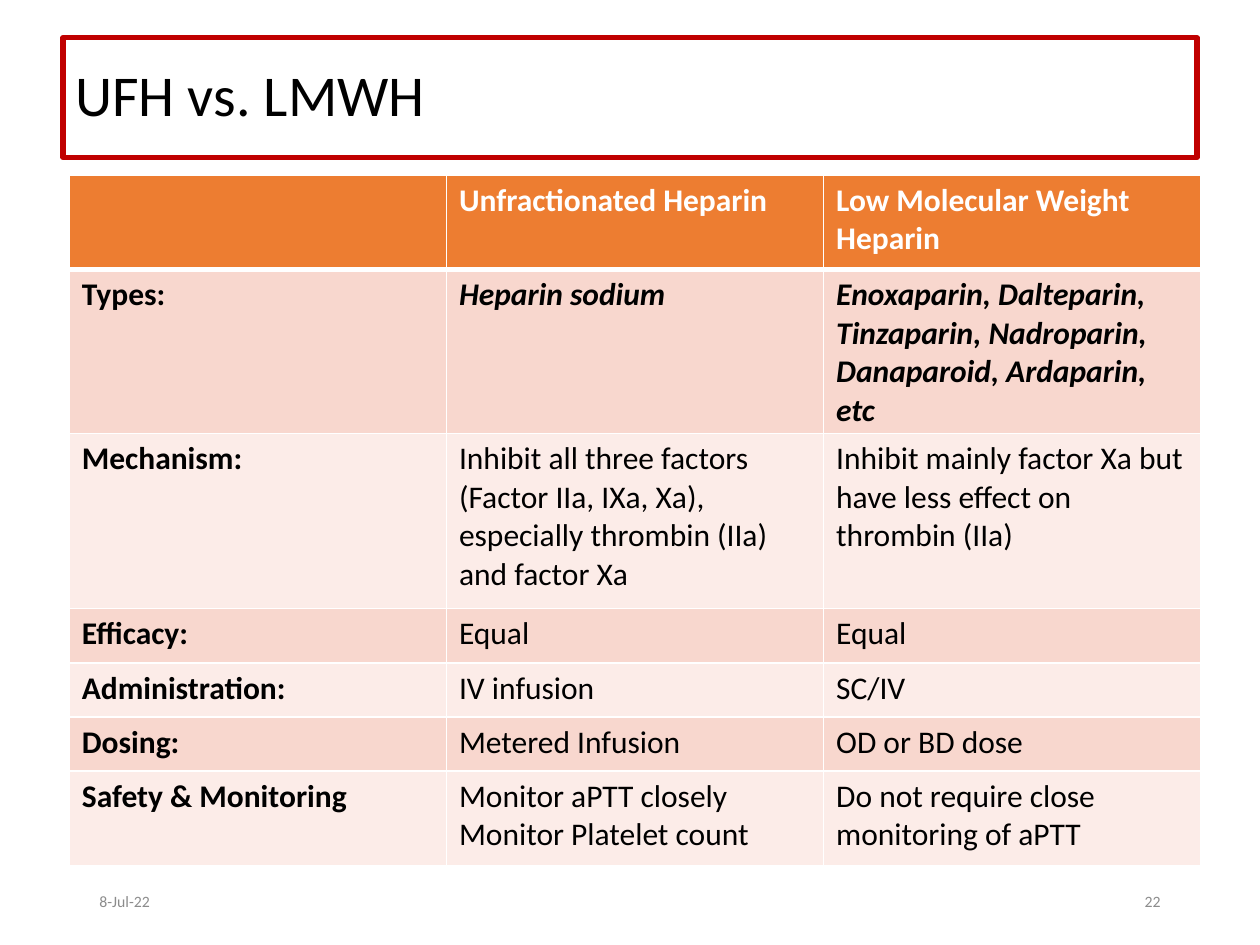
from lxml.etree import SubElement
from pptx import Presentation
from pptx.dml.color import RGBColor
from pptx.enum.shapes import MSO_SHAPE as Shape
from pptx.enum.text import MSO_ANCHOR as Anchor, PP_ALIGN as Align
from pptx.oxml.ns import qn
from pptx.util import Inches, Pt

TITLE = "UFH vs. LMWH"
FOOTERS = [("8-Jul-22", 0.69, Align.LEFT), ("22", 7.06, Align.RIGHT)]
ROWS = [
    (0.75, "", "Unfractionated Heparin", "Low Molecular Weight Heparin"),
    (1.07, "Types:", "Heparin sodium",
     "Enoxaparin, Dalteparin, Tinzaparin, Nadroparin, Danaparoid, Ardaparin, etc"),
    (1.39, "Mechanism:",
     "Inhibit all three factors (Factor IIa, IXa, Xa), especially thrombin (IIa) and factor Xa",
     "Inhibit mainly factor Xa but have less effect on thrombin (IIa)"),
    (0.43, "Efficacy:", "Equal", "Equal"),
    (0.43, "Administration:", "IV infusion", "SC/IV"),
    (0.43, "Dosing:", "Metered Infusion", "OD or BD dose"),
    (0.75, "Safety & Monitoring", "Monitor aPTT closely\nMonitor Platelet count",
     "Do not require close monitoring of aPTT"),
]
HEADER_FILL = "ED7D31"
BAND_FILLS = ["FCECE8", "F8D7CE"]
TABLE_LEFT, TABLE_TOP, TABLE_WIDTH = 0.55, 1.39, 8.98


def color(value):
    """Turn a hex string into a colour."""
    return RGBColor.from_string(value)


def style(paragraph, size, shade, bold=False, italic=False):
    """Set the font of a whole paragraph."""
    font = paragraph.font
    font.name, font.size = "Calibri", Pt(size)
    font.bold, font.italic = bold, italic
    font.color.rgb = color(shade)


def add_title(page):
    """Add the framed title."""
    box = page.shapes.add_shape(
        Shape.RECTANGLE, Inches(0.5), Inches(0.3), Inches(9), Inches(0.95))
    box.shadow.inherit = False
    box.fill.background()
    box.line.color.rgb = color("C00000")
    box.line.width = Pt(3)
    frame = box.text_frame
    frame.text = TITLE
    frame.vertical_anchor = Anchor.MIDDLE
    para = frame.paragraphs[0]
    para.alignment = Align.LEFT
    para.line_spacing = 0.9
    style(para, 33, "000000")


def add_footer(page, text, left, align):
    """Add one small footer text."""
    box = page.shapes.add_textbox(Inches(left), Inches(6.95), Inches(2.25), Inches(0.4))
    frame = box.text_frame
    frame.word_wrap = True
    frame.vertical_anchor = Anchor.MIDDLE
    frame.text = text
    frame.paragraphs[0].alignment = align
    style(frame.paragraphs[0], 9, "8C8C8C")


def add_borders(cell, row):
    """Draw white cell borders, thicker below the header row."""
    widths = {"lnL": 1, "lnR": 1, "lnT": 3 if row == 1 else 1, "lnB": 3 if row == 0 else 1}
    properties = cell._tc.get_or_add_tcPr()
    for side, width in widths.items():
        line = SubElement(properties, qn(f"a:{side}"), w=str(Pt(width)))
        SubElement(SubElement(line, qn("a:solidFill")), qn("a:srgbClr"), val="FFFFFF")


def add_comparison(page):
    """Add the table comparing both heparins."""
    columns = len(ROWS[0]) - 1
    height = sum(row[0] for row in ROWS)
    table = page.shapes.add_table(
        len(ROWS), columns, Inches(TABLE_LEFT), Inches(TABLE_TOP),
        Inches(TABLE_WIDTH), Inches(height)).table
    for row, (row_height, *texts) in enumerate(ROWS):
        table.rows[row].height = Inches(row_height)
        for column, text in enumerate(texts):
            cell = table.cell(row, column)
            add_borders(cell, row)
            cell.fill.solid()
            cell.fill.fore_color.rgb = color(BAND_FILLS[row % 2] if row else HEADER_FILL)
            cell.text = text
            for para in cell.text_frame.paragraphs:
                style(para, 18, "000000" if row else "FFFFFF",
                      bold=row < 2 or column == 0, italic=row == 1 and column > 0)


def main():
    """Build and save the slide."""
    deck = Presentation()
    deck.slide_width, deck.slide_height = Inches(10), Inches(7.5)
    page = deck.slides.add_slide(deck.slide_layouts[6])
    add_title(page)
    for footer in FOOTERS:
        add_footer(page, *footer)
    add_comparison(page)
    deck.save("out.pptx")


if __name__ == "__main__":
    main()
